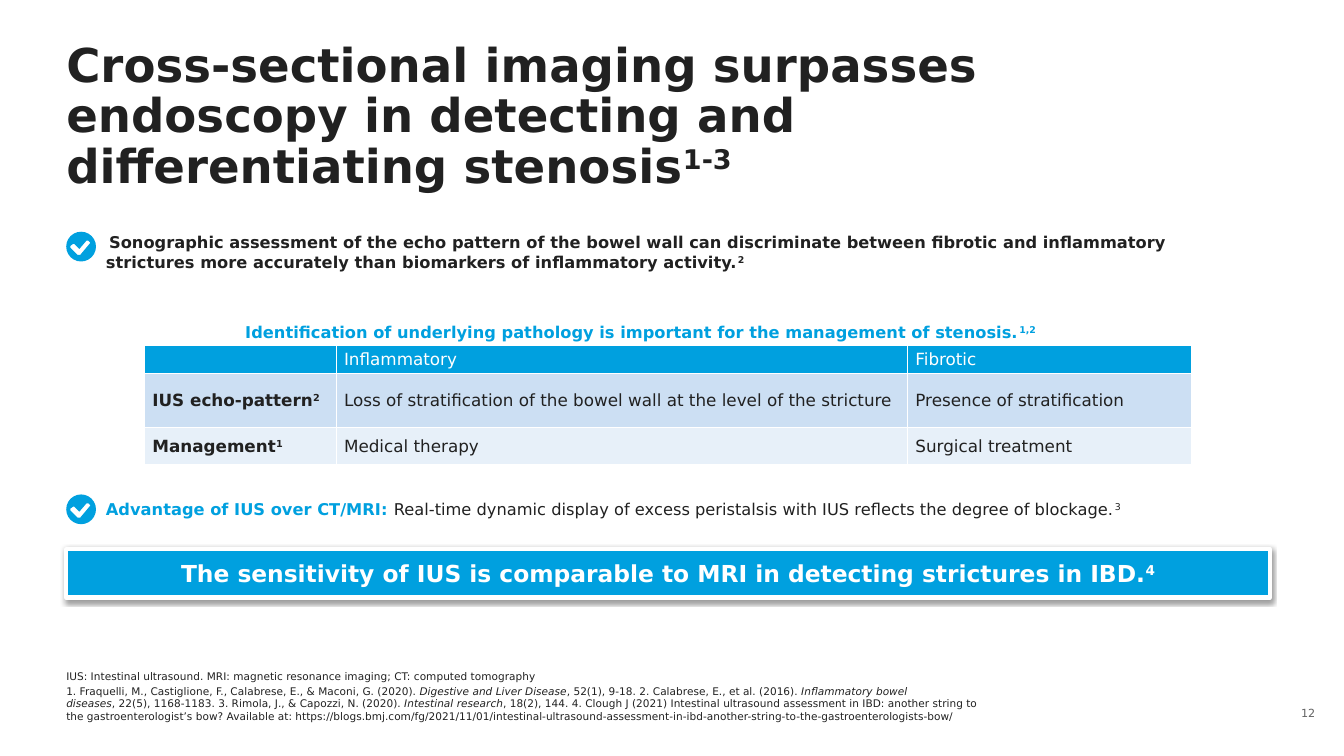
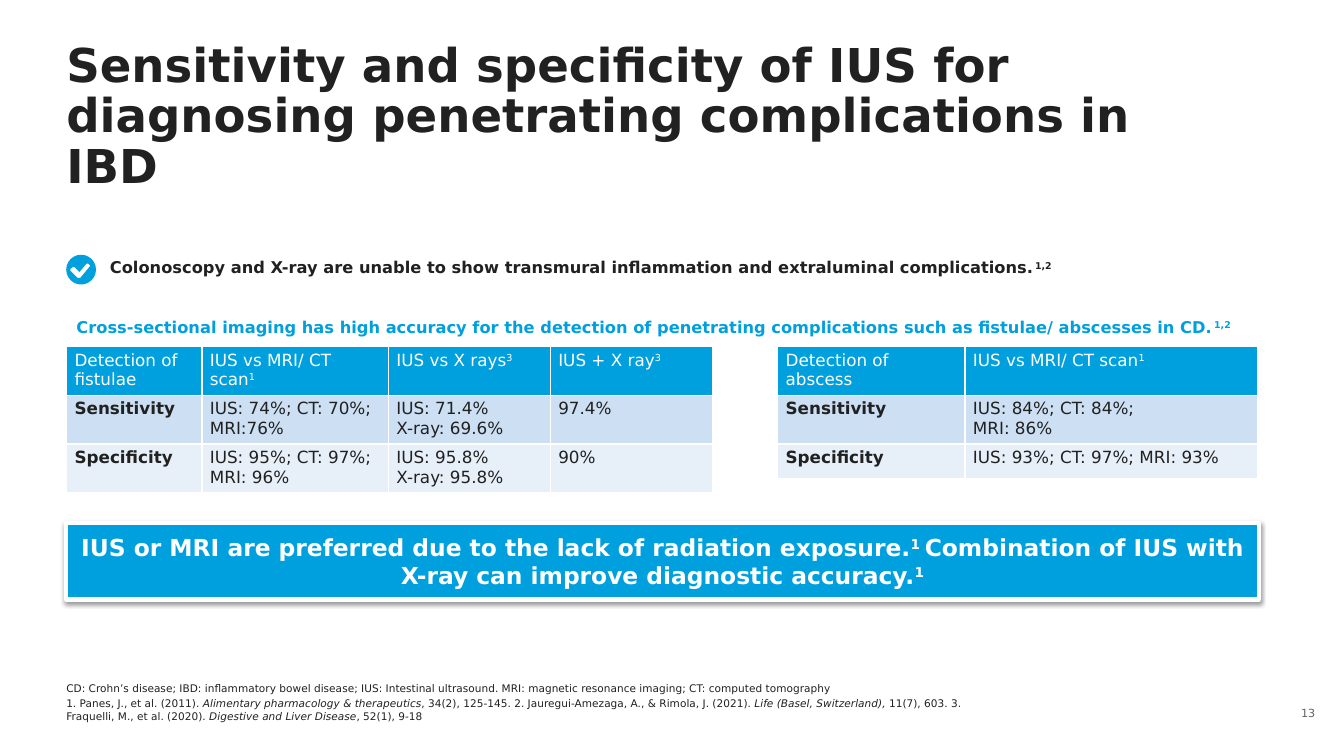
from dataclasses import dataclass
from math import cos, pi, sin

from lxml.etree import SubElement
from pptx import Presentation
from pptx.dml.color import RGBColor
from pptx.enum.shapes import MSO_SHAPE as Preset
from pptx.enum.text import MSO_ANCHOR as Anchor, MSO_AUTO_SIZE as AutoSize, PP_ALIGN as Align
from pptx.oxml.ns import qn
from pptx.util import Cm, Pt

FONT = "DejaVu Sans"
COLORS = {
    "ink": "212121",
    "blue": "00A0DF",
    "white": "FFFFFF",
    "grey": "646464",
    "band_dark": "CCDFF3",
    "band_light": "E7F0F9",
}
LEFT = 1.67
CHECK_SIZE = 0.75
HARD_SPACE = chr(160)
# Tick outline in thousandths of the badge size
TICK = [(814, 370), (745, 300), (680, 300), (440, 580), (270, 410), (230, 410),
        (140, 475), (140, 540), (380, 780), (470, 780), (814, 370)]


# Content types. In texts, "|" separates spans; a span may start with
# "^" (superscript), "_" (italic) or "!" (bold blue lead-in).
# "~" stands for a space that does not break.
@dataclass
class Frame:
    left: float
    top: float
    width: float
    height: float

    def lengths(self) -> tuple:
        return Cm(self.left), Cm(self.top), Cm(self.width), Cm(self.height)


@dataclass
class Style:
    size: float
    color: str = "ink"
    bold: bool = False
    align: Align = Align.LEFT


@dataclass
class Point:
    text: str
    check_top: float
    frame: Frame
    bold: bool = True
    indent: float = 0


@dataclass
class Grid:
    left: float
    top: float
    columns: list
    heights: list
    rows: list
    anchor: Anchor = Anchor.TOP


@dataclass
class Content:
    number: int
    title: str
    references: str
    points: list
    caption: str
    caption_frame: Frame
    grids: list
    banner: str
    banner_frame: Frame


TITLE = Style(33.3, bold=True)
POINT_SIZE = 11.6
CAPTION = Style(POINT_SIZE, "blue", True, Align.CENTER)
BANNER = Style(16.7, "white", True, Align.CENTER)
REFERENCES = Style(7.5)
NUMBER = Style(8, "grey", align=Align.RIGHT)


def rgb(name: str) -> RGBColor:
    return RGBColor.from_string(COLORS[name])


def write(text_frame, text: str, style: Style) -> None:
    """Fill a text frame with marked-up text in one style."""
    text_frame.text = text.replace("~", HARD_SPACE)
    for para in text_frame.paragraphs:
        pieces = para.text.split("|")
        para.text = ""
        para.alignment = style.align
        for piece in pieces:
            if not piece:
                SubElement(para._p, qn("a:endParaRPr"), sz=str(int(style.size * 100)))
                continue
            mark = piece[0] if piece[0] in "^_!" else ""
            span = para.add_run()
            span.text = piece[len(mark):]
            span.font.name = FONT
            span.font.size = Pt(style.size)
            span.font.bold = style.bold or mark == "!"
            span.font.italic = mark == "_"
            span.font.color.rgb = rgb("blue" if mark == "!" else style.color)
            if mark == "^":
                span.font._element.set("baseline", "30000")


def set_frame(text_frame, anchor: Anchor, margin: float | None = None) -> None:
    text_frame.word_wrap = True
    text_frame.auto_size = AutoSize.NONE
    text_frame.vertical_anchor = anchor
    if margin is not None:
        text_frame.margin_left = text_frame.margin_right = Cm(margin)
        text_frame.margin_top = text_frame.margin_bottom = Cm(margin)


def add_text(page, frame: Frame, text: str, style: Style, anchor: Anchor = Anchor.TOP):
    box = page.shapes.add_textbox(*frame.lengths())
    set_frame(box.text_frame, anchor)
    write(box.text_frame, text, style)
    return box


def fill_placeholder(box, frame: Frame, text: str, style: Style, anchor: Anchor) -> None:
    box.left, box.top, box.width, box.height = frame.lengths()
    set_frame(box.text_frame, anchor, 0)
    write(box.text_frame, text, style)


def add_check(page, top: float) -> None:
    """Round badge with the tick cut out of it."""
    circle = [(500 + 500 * cos(step * pi / 12), 500 + 500 * sin(step * pi / 12))
              for step in range(24)]
    outline = page.shapes.build_freeform(*circle[0], scale=Cm(CHECK_SIZE) / 1000)
    outline.add_line_segments(circle[1:])
    outline.move_to(*TICK[0])
    outline.add_line_segments(TICK[1:])
    badge = outline.convert_to_shape(Cm(LEFT), Cm(top))
    badge.shadow.inherit = False
    badge.fill.solid()
    badge.fill.fore_color.rgb = rgb("blue")
    badge.line.fill.background()


def add_point(page, point: Point) -> None:
    add_check(page, point.check_top)
    box = add_text(page, point.frame, point.text, Style(POINT_SIZE, bold=point.bold))
    if point.indent:
        properties = box.text_frame.paragraphs[0]._p.get_or_add_pPr()
        properties.set("indent", str(Cm(point.indent)))


def add_banner(page, frame: Frame, text: str) -> None:
    banner = page.shapes.add_shape(Preset.RECTANGLE, *frame.lengths())
    banner.fill.solid()
    banner.fill.fore_color.rgb = rgb("blue")
    banner.line.color.rgb = rgb("white")
    banner.line.width = Pt(3)
    set_frame(banner.text_frame, Anchor.MIDDLE, 0.25)
    write(banner.text_frame, text, BANNER)
    # Soft shadow below
    banner.shadow.inherit = False
    effects = banner._element.spPr.find(qn("a:effectLst"))
    shadow = SubElement(effects, qn("a:outerShdw"), blurRad=str(Pt(3.1)),
                        dist=str(Pt(1.6)), dir="5400000", rotWithShape="0")
    color = SubElement(shadow, qn("a:srgbClr"), val="000000")
    SubElement(color, qn("a:alpha"), val="38000")


def set_borders(cell) -> None:
    properties = cell._tc.get_or_add_tcPr()
    for tag in ("a:lnL", "a:lnR", "a:lnT", "a:lnB"):
        line = SubElement(properties, qn(tag), w=str(Pt(1)))
        fill = SubElement(line, qn("a:solidFill"))
        SubElement(fill, qn("a:srgbClr"), val=COLORS["white"])


def add_grid(page, grid: Grid) -> None:
    frame = Frame(grid.left, grid.top, sum(grid.columns), sum(grid.heights))
    table = page.shapes.add_table(len(grid.rows), len(grid.columns), *frame.lengths()).table
    for column, width in zip(table.columns, grid.columns):
        column.width = Cm(width)
    for index, (row, height, texts) in enumerate(zip(table.rows, grid.heights, grid.rows)):
        row.height = Cm(height)
        header = index == 0
        band = "blue" if header else "band_dark" if index % 2 else "band_light"
        for position, (cell, text) in enumerate(zip(row.cells, texts)):
            cell.margin_left = cell.margin_right = Cm(0.2)
            cell.margin_top = cell.margin_bottom = Cm(0.1)
            cell.vertical_anchor = grid.anchor
            style = Style(12, "white" if header else "ink", not header and position == 0)
            write(cell.text_frame, text, style)
            set_borders(cell)
            cell.fill.solid()
            cell.fill.fore_color.rgb = rgb(band)


def add_page(deck, content: Content) -> None:
    page = deck.slides.add_slide(deck.slide_layouts[1])
    # Title, references and page number
    title, references = page.shapes.title, page.placeholders[1]
    fill_placeholder(title, Frame(LEFT, 1.06, 28.19, 3.84), content.title, TITLE, Anchor.TOP)
    title.text_frame.paragraphs[0].line_spacing = 0.9
    fill_placeholder(references, Frame(LEFT, 17.45, 23.29, 0.76), content.references,
                     REFERENCES, Anchor.BOTTOM)
    for index, para in enumerate(references.text_frame.paragraphs):
        para.space_before = Pt(1.7 if index else 0)
        properties = para._p.get_or_add_pPr()
        properties.set("marL", "0")
        properties.set("indent", "0")
        SubElement(properties, qn("a:buNone"))
    add_text(page, Frame(32.33, 17.52, 1.07, 0.91), str(content.number), NUMBER, Anchor.MIDDLE)
    # Main content
    add_banner(page, content.banner_frame, content.banner)
    for point in content.points:
        add_point(page, point)
    for grid in content.grids:
        add_grid(page, grid)
    add_text(page, content.caption_frame, content.caption, CAPTION)


PAGES = [
    Content(
        number=12,
        title="Cross-sectional imaging surpasses endoscopy in detecting and "
              "differentiating stenosis|^1-3",
        references="IUS: Intestinal ultrasound. MRI: magnetic resonance imaging; "
                   "CT: computed tomography\n"
                   "1. Fraquelli, M., Castiglione, F., Calabrese, E., & Maconi, G. (2020).~|"
                   "_Digestive and Liver Disease|,~52(1), 9-18. 2. Calabrese, E., et al. (2016).~|"
                   "_Inflammatory bowel diseases|,~22(5), 1168-1183. 3. Rimola, J., & Capozzi, N. "
                   "(2020). |_Intestinal research|,~18(2), 144. 4. Clough J (2021) Intestinal "
                   "ultrasound assessment in IBD: another string to the gastroenterologist’s bow? "
                   "Available at: https://blogs.bmj.com/fg/2021/11/01/intestinal-ultrasound-"
                   "assessment-in-ibd-another-string-to-the-gastroenterologists-bow/",
        points=[
            Point("Sonographic assessment of the echo pattern of the bowel wall can discriminate "
                  "between fibrotic and inflammatory strictures more accurately than biomarkers "
                  "of inflammatory activity.|^2",
                  5.84, Frame(2.42, 5.73, 27.43, 1.24), indent=0.08),
            Point("!Advantage of IUS over CT/MRI: |Real-time dynamic display of excess "
                  "peristalsis with IUS reflects the degree of blockage.|^3",
                  12.46, Frame(2.42, 12.45, 27.43, 0.76), bold=False),
        ],
        caption="Identification of underlying pathology is important for the management "
                "of stenosis.|^1,2",
        caption_frame=Frame(3.23, 8, 25.83, 0.76),
        grids=[Grid(3.64, 8.7, [4.83, 14.4, 7.16], [0.7, 1.36, 0.94], [
            ["", "Inflammatory", "Fibrotic"],
            ["IUS echo-pattern|^2",
             "Loss of stratification of the bowel wall at the level of the stricture",
             "Presence of stratification"],
            ["Management|^1", "Medical therapy", "Surgical treatment"],
        ], Anchor.MIDDLE)],
        banner="The sensitivity of IUS is comparable to MRI in detecting strictures in IBD.|^4",
        banner_frame=Frame(LEFT, 13.84, 30.33, 1.22),
    ),
    Content(
        number=13,
        title="Sensitivity and specificity of IUS for diagnosing penetrating "
              "complications in IBD",
        references="CD: Crohn’s disease; IBD: inflammatory bowel disease; IUS: Intestinal "
                   "ultrasound. MRI: magnetic resonance imaging; CT: computed tomography\n"
                   "1. Panes, J., et al. (2011). |_Alimentary pharmacology & therapeutics|"
                   ",~34(2), 125-145. 2. Jauregui-Amezaga, A., & Rimola, J. (2021).~|"
                   "_Life (Basel, Switzerland),|~11(7), 603. 3. Fraquelli, M., et al. (2020).~|"
                   "_Digestive and Liver Disease|,~52(1), 9-18",
        points=[
            Point("Colonoscopy and X-ray are unable to show transmural inflammation and "
                  "extraluminal complications.|^1,2",
                  6.42, Frame(2.52, 6.37, 29.21, 0.76)),
        ],
        caption="Cross-sectional imaging has high accuracy for the detection of penetrating "
                "complications such as fistulae/ abscesses in CD.|^1,2 ",
        caption_frame=Frame(1.3, 7.87, 30.43, 0.76),
        grids=[
            Grid(1.68, 8.73, [3.41, 4.7, 4.08, 4.08], [1.23] * 3, [
                ["Detection of fistulae", "IUS vs MRI/ CT scan|^1", "IUS vs X rays|^3",
                 "IUS + X ray|^3"],
                ["Sensitivity", "IUS: 74%; CT: 70%; MRI:76%", "IUS: 71.4%\nX-ray: 69.6%",
                 "97.4%"],
                ["Specificity", "IUS: 95%; CT: 97%; MRI: 96%", "IUS: 95.8%\nX-ray: 95.8%",
                 "90%"],
            ]),
            Grid(19.6, 8.73, [4.72, 7.38], [1.23, 1.23, 0.86], [
                ["Detection of abscess", "IUS vs MRI/ CT scan|^1"],
                ["Sensitivity", "IUS: 84%; CT: 84%;\nMRI: 86%"],
                ["Specificity", "IUS: 93%; CT: 97%; MRI: 93%"],
            ]),
        ],
        banner="IUS or MRI are preferred due to the lack of radiation exposure.|^1 |"
               "Combination of IUS with X-ray can improve diagnostic accuracy.|^1",
        banner_frame=Frame(LEFT, 13.18, 30.05, 1.93),
    ),
]


def main() -> None:
    deck = Presentation()
    deck.slide_width, deck.slide_height = Cm(33.87), Cm(19.05)
    for content in PAGES:
        add_page(deck, content)
    deck.save("out.pptx")


if __name__ == "__main__":
    main()
